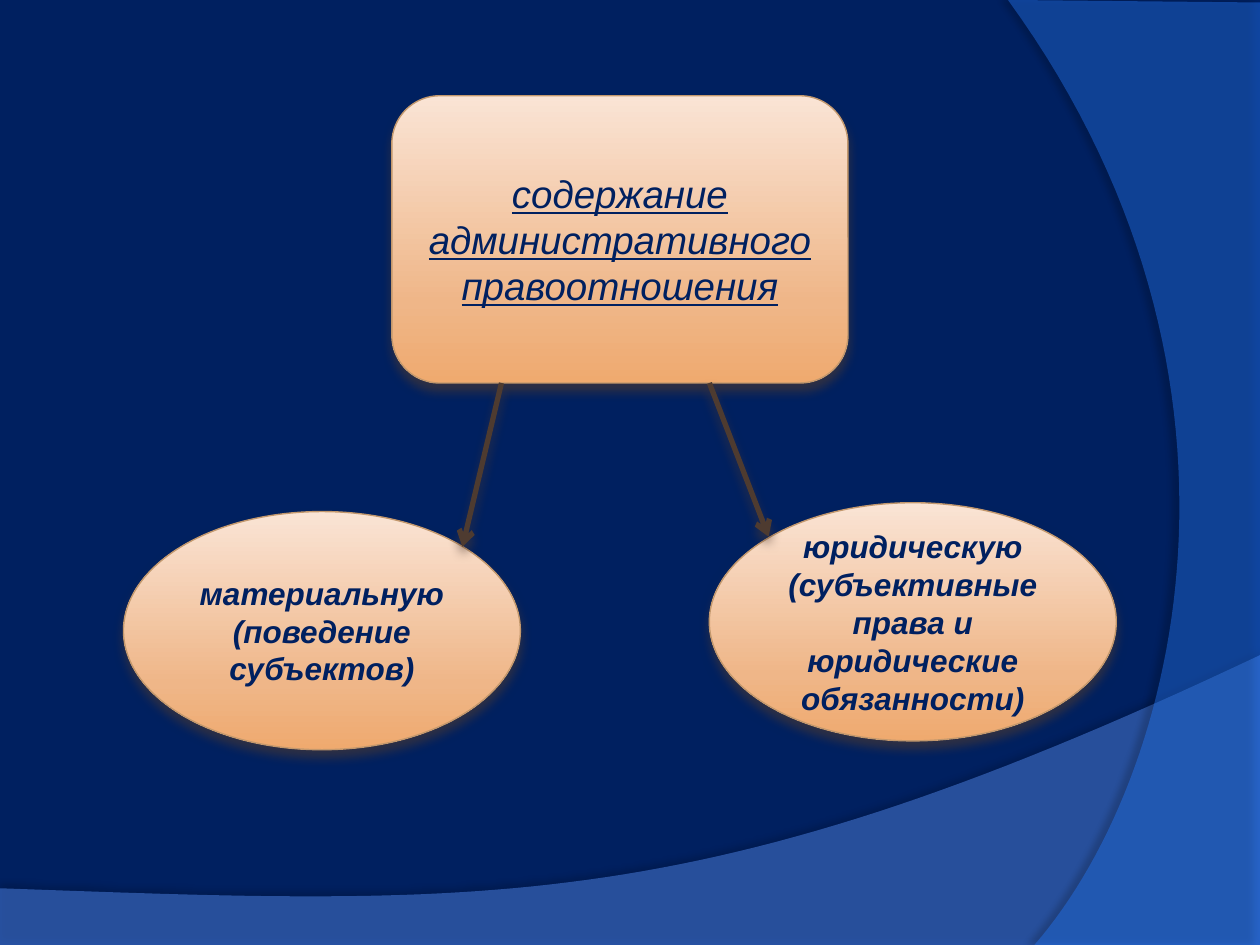
from copy import deepcopy

from lxml import etree
from pptx import Presentation
from pptx import util as u
from pptx.dml.color import RGBColor
from pptx.enum import shapes, text
from pptx.oxml.ns import qn

COLORS = {
    "navy": "002060", "wave": "5790F7", "arc": "267DFF", "black": "000000",
    "edge": "C3986D", "brown": "4E3B30",
    "light": "FAE4D5", "mid": "EFB688", "deep": "EFAA6F",
}
RGB = {name: RGBColor.from_string(value) for name, value in COLORS.items()}

prs = Presentation()
prs.slide_width, prs.slide_height = u.Inches(10), u.Inches(7.5)
X, Y = prs.slide_width / 100, prs.slide_height / 100
s = prs.slides.add_slide(prs.slide_layouts[6])
s.background.fill.solid()
s.background.fill.fore_color.rgb = RGB["navy"]


def add_shadow(shape, color, alpha, blur, dist, angle):
    spPr = shape._element.spPr
    effects = spPr.find(qn("a:effectLst"))
    if effects is None:
        effects = etree.SubElement(spPr, qn("a:effectLst"))
    outer = etree.SubElement(effects, qn("a:outerShdw"), blurRad=str(u.Pt(blur)),
                             dist=str(u.Pt(dist)), dir=str(angle * 60000),
                             algn="ctr", rotWithShape="0")
    clr = etree.SubElement(outer, qn("a:srgbClr"), val=COLORS[color])
    etree.SubElement(clr, qn("a:alpha"), val=str(alpha * 1000))


def bezier(p0, p1, p2, p3, steps=60):
    for i in range(1, steps + 1):
        t = i / steps
        k = ((1 - t) ** 3, 3 * t * (1 - t) ** 2, 3 * t ** 2 * (1 - t), t ** 3)
        yield tuple(sum(w * c for w, c in zip(k, axis)) for axis in zip(p0, p1, p2, p3))


wave = [(0, 94), (0, 100.13), (100, 100.13), (100, 69.33),
        *bezier((100, 69.33), (55.9, 97.2), (39.1, 95.87), (0, 94))]
arc = [(100, 0.27), (100, 100), (82.1, 100),
       *bezier((82.1, 100), (93.5, 82.53), (101.8, 40), (80, 0))]
for points, color, opacity, shadow in (
    (wave, "wave", 45, (35, 4, 3.5, 270)),
    (arc, "arc", 40, (45, 4, 4, 180)),
):
    pts = [(round(x * X), round(y * Y)) for x, y in points]
    fb = s.shapes.build_freeform(*pts[0])
    fb.add_line_segments(pts[1:])
    sp = fb.convert_to_shape()
    sp.shadow.inherit = False
    sp.line.fill.background()
    sp.fill.solid()
    sp.fill.fore_color.rgb = RGB[color]
    clr = sp._element.spPr.find(qn("a:solidFill"))[0]
    etree.SubElement(clr, qn("a:alpha"), val=str(opacity * 1000))
    add_shadow(sp, "black", *shadow)

SOFT = ("brown", 60, 6, 4, 90)
STOPS = ((0, "light"), (0.72, "mid"), (1, "deep"))
MS = shapes.MSO_SHAPE
for kind, left, top, width, height, words, size, main in (
    (MS.ROUNDED_RECTANGLE, 31.1, 10.13, 36.2, 30.4,
     "содержание административного правоотношения", 22, True),
    (MS.OVAL, 9.8, 54.13, 31.5, 25.2,
     "материальную (поведение субъектов)", 18, False),
    (MS.OVAL, 56.3, 53.2, 32.3, 25.2,
     "юридическую (субъективные права и юридические обязанности)", 18, False),
):
    sp = s.shapes.add_shape(kind, round(left * X), round(top * Y),
                            round(width * X), round(height * Y))
    sp.shadow.inherit = False
    sp.fill.gradient()
    sp.fill.gradient_angle = 270
    gs = sp._element.spPr.find(qn("a:gradFill")).find(qn("a:gsLst"))
    gs.append(deepcopy(gs[0]))
    for stop, (position, color) in zip(sp.fill.gradient_stops, STOPS):
        stop.position = position
        stop.color.rgb = RGB[color]
    sp.line.color.rgb = RGB["edge"]
    sp.line.width = u.Pt(0.79)
    add_shadow(sp, *SOFT)
    tf = sp.text_frame
    tf.text = words
    tf.word_wrap = True
    tf.vertical_anchor = text.MSO_ANCHOR.MIDDLE
    p = tf.paragraphs[0]
    p.alignment = text.PP_ALIGN.CENTER
    f = p.runs[0].font
    f.name, f.size, f.italic = "Arial", u.Pt(size), True
    f.bold, f.underline = not main, main
    f.color.rgb = RGB["navy"]

for x1, y1, x2, y2 in ((39.8, 40.53, 36.7, 57.87), (56.3, 40.53, 61, 56.8)):
    cx = s.shapes.add_connector(shapes.MSO_CONNECTOR.STRAIGHT, round(x1 * X),
                                round(y1 * Y), round(x2 * X), round(y2 * Y))
    cx.line.color.rgb = RGB["brown"]
    cx.line.width = u.Pt(3)
    ln = cx._element.spPr.find(qn("a:ln"))
    etree.SubElement(ln, qn("a:tailEnd"), type="arrow")
    add_shadow(cx, *SOFT)

prs.save("out.pptx")
